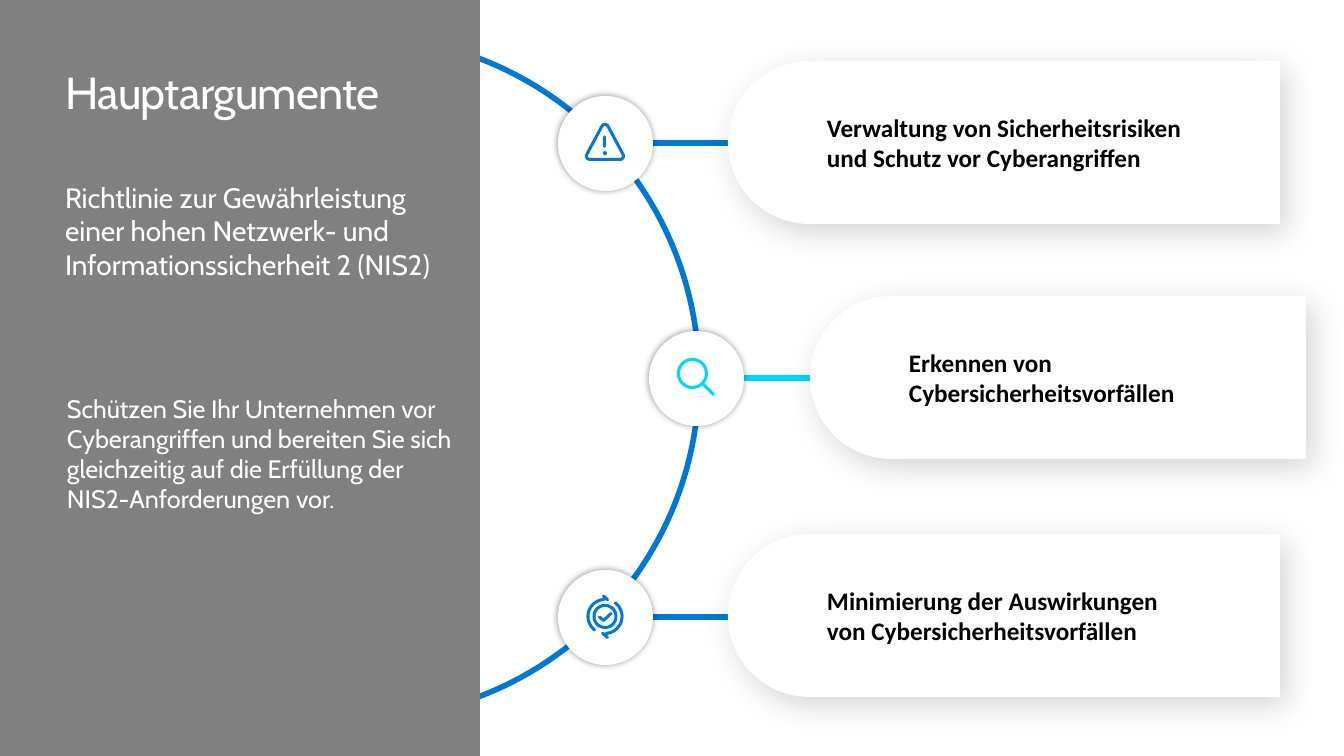
"""Build the slide on the main arguments for the NIS2 directive."""
import math
from dataclasses import dataclass

import lxml.etree
import pptx
import pptx.dml.color
import pptx.enum.shapes
import pptx.enum.text
import pptx.oxml.ns
import pptx.util

SCALE = 914400 / 100.8
COLOURS = {"blue": "0078D4", "cyan": "00D7FB", "grey": "808080", "white": "FFFFFF", "black": "000000"}
CARD_HEIGHT = 163
BADGE_SIZE = 95
ICON_UNITS_PER_PX = 10
SHAPES = pptx.enum.shapes.MSO_SHAPE
ANCHORS = pptx.enum.text.MSO_ANCHOR

Point = tuple[float, float]
Stroke = list[Point]


@dataclass
class Shadow:
    alpha: int
    blur: float
    distance: float
    angle: int


@dataclass
class Argument:
    text: str
    colour: str
    badge_x: int
    badge_y: int
    card_left: int
    card_top: int
    card_width: int
    icon: list[Stroke]


@dataclass
class Label:
    text: str
    left: int
    top: int
    width: int
    height: int
    size: int
    font: str = "Cabin"
    colour: str = "white"
    bold: bool = False
    anchor: ANCHORS = ANCHORS.TOP


CARD_SHADOW = Shadow(16, 22.5, 7.3, 53)
BADGE_SHADOW = Shadow(40, 5, 0, 0)


def px(length: float) -> int:
    """Turn px into EMU."""
    return round(length * SCALE)


def rgb(name: str) -> pptx.dml.color.RGBColor:
    """Look up a named colour."""
    return pptx.dml.color.RGBColor.from_string(COLOURS[name])


def arc(x: float, y: float, radius: float, start: int = 0, end: int = 360) -> Stroke:
    """Give points along a clockwise arc, with angles in degrees from the right."""
    steps = max(4, (end - start) // 6)
    angles = [math.radians(start + (end - start) * step / steps) for step in range(steps + 1)]
    return [(x + radius * math.cos(angle), y + radius * math.sin(angle)) for angle in angles]


def warning_icon() -> list[Stroke]:
    """Outline a rounded triangle with an exclamation mark."""
    triangle = arc(0, -150, 35, 208, 332) + arc(150, 130, 35, -28, 90) + arc(-150, 130, 35, 90, 208)
    return [triangle + triangle[:1], [(0, -60), (0, 35)], arc(0, 102, 5)]


def search_icon() -> list[Stroke]:
    """Outline a magnifier."""
    return [arc(-35, -45, 140), [(65, 55), (175, 165)]]


def cycle_icon() -> list[Stroke]:
    """Outline a ticked ring between two turning arrows."""
    return [
        arc(0, -5, 110),
        [(-55, 0), (-15, 35), (60, -35)],
        arc(0, -5, 170, -53, 87),
        arc(0, -5, 170, 128, 267),
        [(-15, -210), (25, -172)],
        [(25, 205), (-25, 162)],
    ]


ARGUMENTS = [
    Argument("Verwaltung von Sicherheitsrisiken und Schutz vor Cyberangriffen",
             "blue", 605, 143, 728, 61, 552, warning_icon()),
    Argument("Erkennen von Cybersicherheitsvorfällen",
             "cyan", 696, 378, 810, 296, 496, search_icon()),
    Argument("Minimierung der Auswirkungen von Cybersicherheitsvorfällen",
             "blue", 605, 617, 728, 534, 552, cycle_icon()),
]
PANEL_LABELS = [
    Label("Richtlinie zur Gewährleistung einer hohen Netzwerk- und Informationssicherheit 2 (NIS2)",
          65, 180, 385, 141, 20),
    Label("Schützen Sie Ihr Unternehmen vor Cyberangriffen und bereiten Sie sich gleichzeitig "
          "auf die Erfüllung der NIS2-Anforderungen vor.", 67, 393, 390, 122, 18),
]
TITLE = Label("Hauptargumente", 65, 65, 351, 64, 32)


def add_shape(page, kind, left: float, top: float, width: int, height: int,
              fill: str | None = None, line: str | None = None):
    """Add a preset shape without a shadow."""
    shape = page.shapes.add_shape(kind, px(left), px(top), px(width), px(height))
    if fill:
        shape.fill.solid()
        shape.fill.fore_color.rgb = rgb(fill)
    else:
        shape.fill.background()
    if line:
        shape.line.color.rgb = rgb(line)
        shape.line.width = pptx.util.Pt(4)
    else:
        shape.line.fill.background()
    shape.shadow.inherit = False
    return shape


def add_shadow(shape, shadow: Shadow) -> None:
    """Give a shape a soft black outer shadow."""
    name = pptx.oxml.ns.qn
    effects = shape._element.spPr.find(name("a:effectLst"))
    outer = lxml.etree.SubElement(
        effects, name("a:outerShdw"), blurRad=str(pptx.util.Pt(shadow.blur)),
        dist=str(pptx.util.Pt(shadow.distance)), dir=str(shadow.angle * 60000),
        algn="ctr", rotWithShape="0")
    colour = lxml.etree.SubElement(outer, name("a:srgbClr"), val=COLOURS["black"])
    lxml.etree.SubElement(colour, name("a:alpha"), val=str(shadow.alpha * 1000))


def fill_text(box, label: Label) -> None:
    """Place a text shape and write its one paragraph."""
    box.left, box.top, box.width, box.height = map(px, (label.left, label.top, label.width, label.height))
    frame = box.text_frame
    frame.word_wrap = True
    frame.auto_size = pptx.enum.text.MSO_AUTO_SIZE.NONE
    frame.vertical_anchor = label.anchor
    frame.margin_left = frame.margin_top = frame.margin_right = frame.margin_bottom = 0
    para = frame.paragraphs[0]
    para.text = label.text
    para.alignment = pptx.enum.text.PP_ALIGN.LEFT
    para.font.name = label.font
    para.font.size = pptx.util.Pt(label.size)
    para.font.bold = label.bold
    para.font.color.rgb = rgb(label.colour)


def add_label(page, label: Label) -> None:
    """Add a text box."""
    fill_text(page.shapes.add_textbox(0, 0, 0, 0), label)


def add_card(page, argument: Argument) -> None:
    """Add the connecting line and the card it leads to."""
    line = page.shapes.add_connector(
        pptx.enum.shapes.MSO_CONNECTOR.STRAIGHT, px(argument.card_left + 20), px(argument.badge_y),
        px(argument.badge_x), px(argument.badge_y))
    line.line.color.rgb = rgb(argument.colour)
    line.line.width = pptx.util.Pt(4)
    lxml.etree.SubElement(line._element.spPr, pptx.oxml.ns.qn("a:effectLst"))
    turn = (argument.card_width - CARD_HEIGHT) / 2
    card = add_shape(page, SHAPES.ROUND_2_SAME_RECTANGLE, argument.card_left + turn,
                     argument.card_top - turn, CARD_HEIGHT, argument.card_width, "white")
    card.adjustments[0], card.adjustments[1] = 0.5, 0
    card.rotation = 270
    add_shadow(card, CARD_SHADOW)


def add_badge(page, argument: Argument) -> None:
    """Add the round badge, its icon and the card text."""
    badge = add_shape(page, SHAPES.OVAL, argument.badge_x - BADGE_SIZE // 2,
                      argument.badge_y - BADGE_SIZE // 2, BADGE_SIZE, BADGE_SIZE, "white")
    add_shadow(badge, BADGE_SHADOW)
    builder = page.shapes.build_freeform(*argument.icon[0][0], scale=SCALE / ICON_UNITS_PER_PX)
    for index, stroke in enumerate(argument.icon):
        if index:
            builder.move_to(*stroke[0])
        builder.add_line_segments(stroke[1:], close=False)
    icon = builder.convert_to_shape(px(argument.badge_x), px(argument.badge_y))
    icon.fill.background()
    icon.line.color.rgb = rgb(argument.colour)
    icon.line.width = px(3)
    icon.line._get_or_add_ln().set("cap", "rnd")
    icon.shadow.inherit = False
    add_label(page, Label(argument.text, argument.card_left + 99, argument.card_top + 43, 365, 77,
                          18, "Calibri", "black", True, ANCHORS.MIDDLE))


def main() -> None:
    """Build and save the deck."""
    deck = pptx.Presentation()
    deck.slide_width, deck.slide_height = px(1344), px(756)
    page = deck.slides.add_slide(deck.slide_layouts[5])
    for argument in ARGUMENTS:
        add_card(page, argument)
    add_shape(page, SHAPES.OVAL, 16, 36, 683, 683, line="blue")
    add_shape(page, SHAPES.RECTANGLE, 0, 0, 480, 756, "grey")
    title = page.shapes.title
    page.shapes._spTree.append(title._element)
    fill_text(title, TITLE)
    title.text_frame.paragraphs[0].runs[0]._r.get_or_add_rPr().set("spc", "-50")
    for label in PANEL_LABELS:
        add_label(page, label)
    for argument in ARGUMENTS:
        add_badge(page, argument)
    deck.save("out.pptx")


if __name__ == "__main__":
    main()
